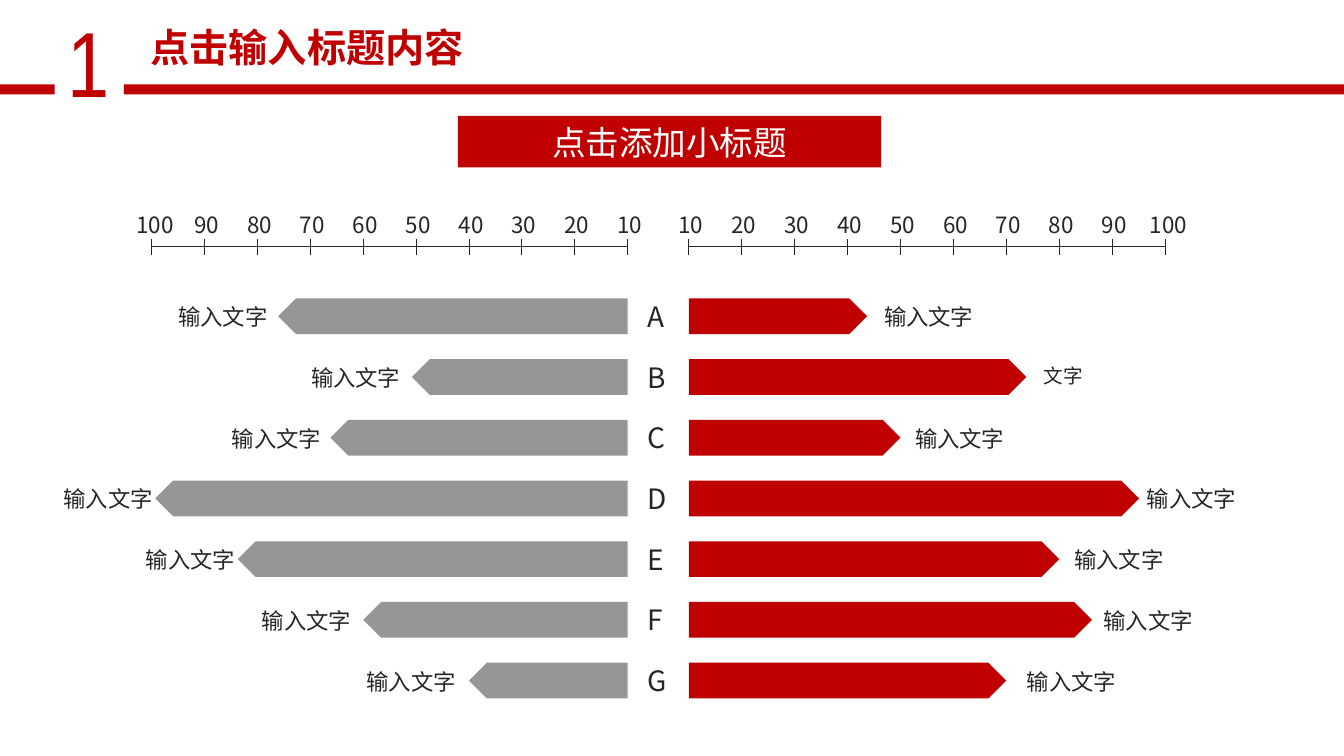
"""Build a slide with two mirrored arrow-bar scales for rows A to G."""
from lxml import etree
from pptx import Presentation
from pptx import util as u
from pptx.dml.color import RGBColor
from pptx.enum import shapes, text
from pptx.oxml import ns

TITLE = "点击输入标题内容"
SUBTITLE = "点击添加小标题"
CHAPTER = "1"
COLORS = {"red": "C00000", "gray": "969696", "ink": "262626", "white": "FFFFFF"}
FONT = "Noto Sans CJK SC"
NUMBER_FONT = "Arial Narrow"
TICKS = list(range(10, 101, 10))
LETTERS = "ABCDEFG"
SIDES = [
    {
        "start": 15.82, "direction": -1, "color": "gray",
        "bars": [
            (76.1, 4.24, "输入文字", 16), (50.8, 7.59, "输入文字", 16),
            (66.2, 5.59, "输入文字", 16), (99.3, 1.35, "输入文字", 16),
            (83.7, 3.43, "输入文字", 16), (60, 6.35, "输入文字", 16),
            (40, 8.99, "输入文字", 16),
        ],
    },
    {
        "start": 17.36, "direction": 1, "color": "red",
        "bars": [
            (43.7, 22.03, "输入文字", 16), (73.8, 26.06, "文字", 14),
            (50, 22.81, "输入文字", 16), (95.1, 28.65, "输入文字", 16),
            (80, 26.82, "输入文字", 16), (86.2, 27.56, "输入文字", 16),
            (70, 25.63, "输入文字", 16),
        ],
    },
]

AXIS_LENGTH = 12
UNIT = AXIS_LENGTH / (TICKS[-1] - TICKS[0])
AXIS_TOP, TICK_HALF = 6.22, 0.2
ROW_TOP, ROW_STEP, BAR_HEIGHT = 7.52, 1.53, 0.9
LABEL_PADDING = 0.6


def color(name):
    return RGBColor.from_string(COLORS[name])


def write(frame, words, size, tint="ink", font=FONT, bold=False, align=None):
    para = frame.paragraphs[0]
    para.alignment = align
    span = para.add_run()
    span.text = words
    span.font.size = u.Pt(size)
    span.font.bold = bold
    span.font.name = font
    span.font.color.rgb = color(tint)
    east_asian = etree.Element(ns.qn("a:ea"), typeface=font)
    span.font._element.find(ns.qn("a:latin")).addnext(east_asian)


def add_text(page, words, left, top, width, height, size, wrap=False, **style):
    box = page.shapes.add_textbox(u.Cm(left), u.Cm(top), u.Cm(width), u.Cm(height))
    box.text_frame.word_wrap = wrap
    write(box.text_frame, words, size, **style)


def add_block(page, kind, left, top, width, height, tint):
    block = page.shapes.add_shape(kind, u.Cm(left), u.Cm(top), u.Cm(width), u.Cm(height))
    block.shadow.inherit = False
    block.fill.solid()
    block.fill.fore_color.rgb = color(tint)
    block.line.fill.background()
    return block


def add_line(group, x1, y1, x2, y2):
    line = group.shapes.add_connector(
        shapes.MSO_CONNECTOR.STRAIGHT, u.Cm(x1), u.Cm(y1), u.Cm(x2), u.Cm(y2))
    line.line.color.rgb = color("ink")
    line.line.width = u.Pt(0.75)
    etree.SubElement(line._element.spPr, ns.qn("a:effectLst"))


def add_header(page):
    rectangle = shapes.MSO_SHAPE.RECTANGLE
    add_text(page, CHAPTER, 1.45, 0, 0.86, 3.07, 66, wrap=True,
             tint="red", font=NUMBER_FONT)
    for left, width in [(3.12, 30.76), (-0.08, 1.46)]:
        add_block(page, rectangle, left, 2.13, width, 0.25, "red")
    banner = add_block(page, rectangle, 11.54, 2.92, 10.67, 1.3, "red")
    banner.text_frame.vertical_anchor = text.MSO_ANCHOR.MIDDLE
    write(banner.text_frame, SUBTITLE, 24, "white", align=text.PP_ALIGN.CENTER)

    title = page.shapes.title
    title.left, title.top, title.width, title.height = map(u.Cm, (3.18, 0.47, 9.12, 1.45))
    title.text_frame.auto_size = text.MSO_AUTO_SIZE.NONE
    title.text_frame.vertical_anchor = text.MSO_ANCHOR.TOP
    write(title.text_frame, TITLE, 28, "red", bold=True, align=text.PP_ALIGN.CENTER)


def add_axis(page, start, direction):
    axis = page.shapes.add_group_shape()
    add_line(axis, start, AXIS_TOP, start + direction * AXIS_LENGTH, AXIS_TOP)
    for tick in TICKS:
        x = start + direction * (tick - TICKS[0]) * UNIT
        add_line(axis, x, AXIS_TOP - TICK_HALF, x, AXIS_TOP + TICK_HALF)
        offset, width = (0.63, 1.52) if tick == 100 else (0.51, 1.17)
        add_text(page, str(tick), x - offset, 5.19, width, 0.94, 16)


def add_bars(page, side):
    start, direction = side["start"], side["direction"]
    for row, (value, label_left, label, size) in enumerate(side["bars"]):
        top = ROW_TOP + row * ROW_STEP
        length = (value - TICKS[0]) * UNIT
        left = min(start, start + direction * length)
        bar = add_block(page, shapes.MSO_SHAPE.PENTAGON, left, top,
                        length, BAR_HEIGHT, side["color"])
        if direction < 0:
            bar._element.spPr.xfrm.set("flipH", "1")
        label_width = LABEL_PADDING + len(label) * size * 2.54 / 72
        add_text(page, label, label_left, top, label_width, 0.94, size)


def main():
    deck = Presentation()
    deck.slide_width, deck.slide_height = u.Cm(33.87), u.Cm(19.05)
    page = deck.slides.add_slide(deck.slide_layouts[5])
    add_header(page)
    for side in SIDES:
        add_axis(page, side["start"], side["direction"])
        add_bars(page, side)
    for row, letter in enumerate(LETTERS):
        add_text(page, letter, 16.08, ROW_TOP - 0.1 + row * ROW_STEP, 1.02, 1.12, 20)
    deck.save("out.pptx")


if __name__ == "__main__":
    main()
